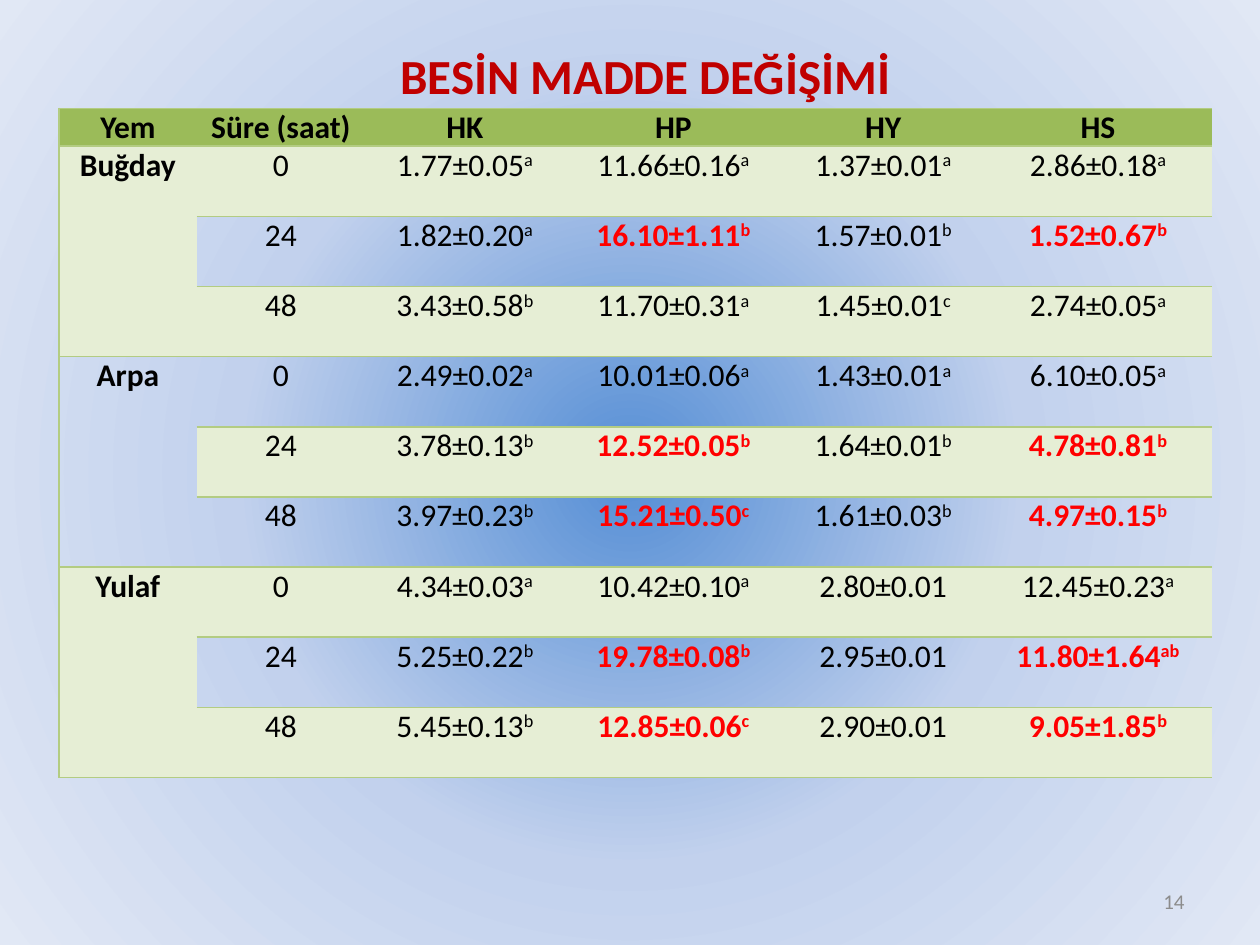
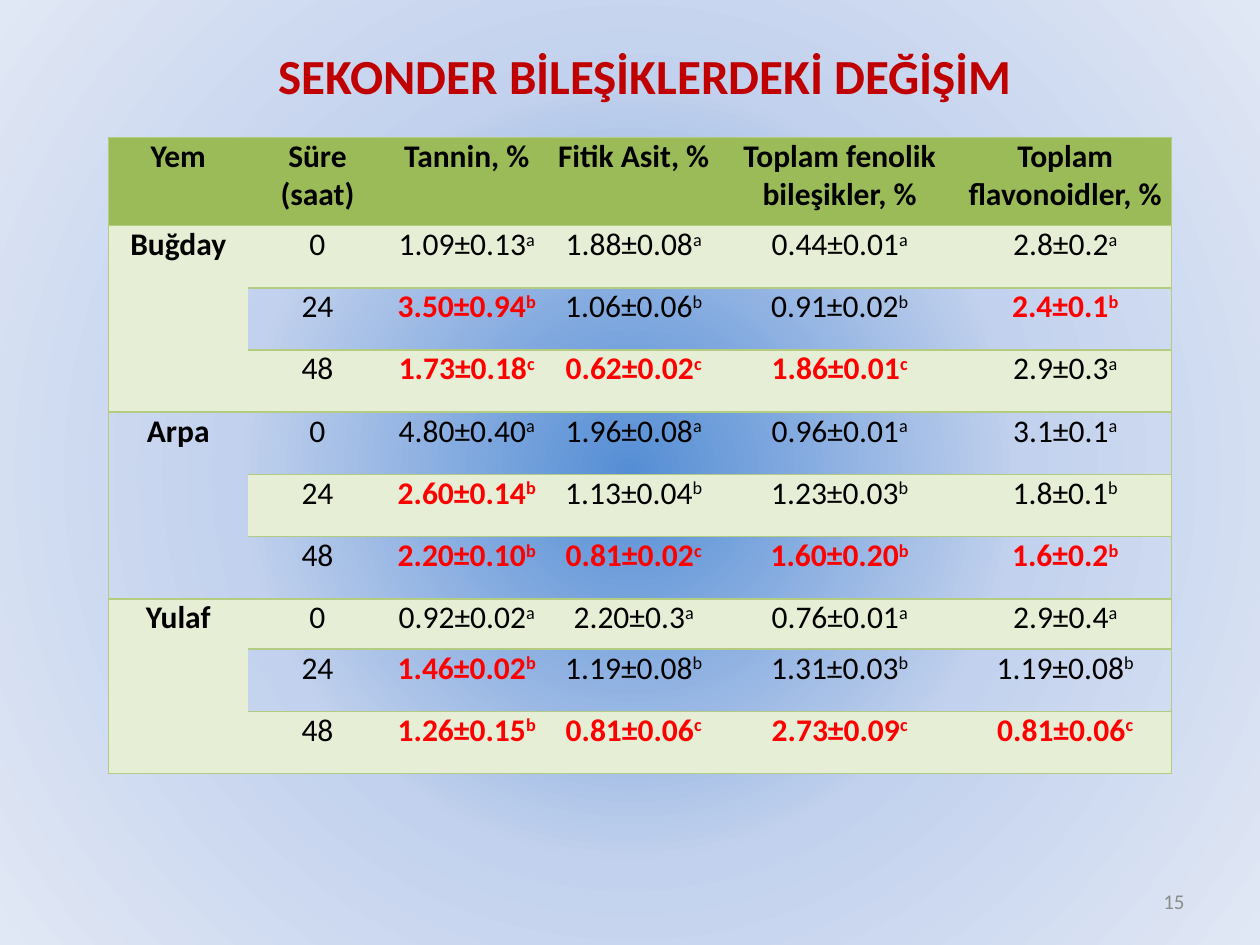
"""Build two slides of feed composition tables on a shared radial background."""
import dataclasses

import lxml.etree
import pptx
import pptx.dml.color
import pptx.enum.text
import pptx.oxml
import pptx.util

NAMESPACE = "http://schemas.openxmlformats.org/drawingml/2006/main"
NO_GRID_STYLE = "{2D5ABB26-0587-4C30-8999-92F81FD0307C}"
ALIGN = pptx.enum.text.PP_ALIGN
ANCHOR = pptx.enum.text.MSO_ANCHOR


@dataclasses.dataclass(frozen=True)
class Theme:
    font: str = "Calibri"
    title_size: int = 28
    table_size: int = 18
    number_size: int = 12
    title: str = "C00000"
    ink: str = "000000"
    highlight: str = "FF0000"
    muted: str = "8C8C8C"
    header: str = "9BBB59"
    band: str = "E6EED5"
    rule: str = "B3CC82"
    backdrop: tuple = ((0, "558ED5"), (50, "C2D1ED"), (100, "E1E8F5"))


def write(para, text, *, font, size, color, bold=False, raised=False, align=None):
    span = para.add_run()
    span.text = text
    span.font.name = font
    span.font.size = pptx.util.Pt(size)
    span.font.bold = bold
    span.font.color.rgb = pptx.dml.color.RGBColor.from_string(color)
    if raised:
        span.font._element.set("baseline", "30000")
    if align is not None:
        para.alignment = align


class Composer:
    COLUMNS, ROWS = 100, 75

    def __init__(self, deck, theme):
        self.deck = deck
        self.theme = theme
        self.page = None

    def across(self, columns):
        return round(self.deck.slide_width * columns / self.COLUMNS)

    def down(self, rows):
        return round(self.deck.slide_height * rows / self.ROWS)

    def area(self, left, top, width, height):
        return self.across(left), self.down(top), self.across(width), self.down(height)

    def new_page(self, title, number):
        self.page = self.deck.slides.add_slide(self.deck.slide_layouts[5])
        self.backdrop()
        self.title(title)
        self.page_number(number)

    def backdrop(self):
        fill = self.page.background.fill
        fill.solid()
        solid = self.page._element.find(f".//{{{NAMESPACE}}}solidFill")
        stops = "".join(
            f'<a:gs pos="{position * 1000}"><a:srgbClr val="{color}"/></a:gs>'
            for position, color in self.theme.backdrop
        )
        gradient = pptx.oxml.parse_xml(
            f'<a:gradFill xmlns:a="{NAMESPACE}" rotWithShape="1"><a:gsLst>{stops}</a:gsLst>'
            '<a:path path="circle"><a:fillToRect l="50000" t="50000" r="50000" b="50000"/>'
            "</a:path></a:gradFill>"
        )
        solid.getparent().replace(solid, gradient)

    def title(self, text):
        box = self.page.shapes.title
        box.left, box.top, box.width, box.height = self.area(5.5, 3.1, 91.4, 8.8)
        frame = box.text_frame
        frame.auto_size = pptx.enum.text.MSO_AUTO_SIZE.NONE
        frame.vertical_anchor = ANCHOR.TOP
        write(frame.paragraphs[0], text, font=self.theme.font, size=self.theme.title_size,
              color=self.theme.title, bold=True, align=ALIGN.CENTER)

    def page_number(self, number):
        frame = self.page.shapes.add_textbox(*self.area(71.7, 69.5, 23.3, 4)).text_frame
        frame.word_wrap = True
        frame.vertical_anchor = ANCHOR.MIDDLE
        write(frame.paragraphs[0], str(number), font=self.theme.font,
              size=self.theme.number_size, color=self.theme.muted, align=ALIGN.RIGHT)

    def border(self, cell, sides):
        properties = cell._tc.get_or_add_tcPr()
        for index, side in enumerate(sides):
            line = lxml.etree.Element(f"{{{NAMESPACE}}}ln{side}", w=str(pptx.util.Pt(1)))
            paint = lxml.etree.SubElement(line, f"{{{NAMESPACE}}}solidFill")
            lxml.etree.SubElement(paint, f"{{{NAMESPACE}}}srgbClr", val=self.theme.rule)
            properties.insert(index, line)

    def cell(self, cell, text, *, fill=None, sides="TB", bold=False):
        cell.margin_left = cell.margin_right = self.across(0.7)
        cell.margin_top = cell.margin_bottom = 0
        cell.vertical_anchor = ANCHOR.TOP
        if fill:
            cell.fill.solid()
            cell.fill.fore_color.rgb = pptx.dml.color.RGBColor.from_string(fill)
        else:
            cell.fill.background()
        self.border(cell, sides)
        marked = text.startswith("*")
        value, caret, letter = text.lstrip("*").partition("^")
        style = dict(font=self.theme.font, size=self.theme.table_size, bold=bold or marked,
                     color=self.theme.highlight if marked else self.theme.ink,
                     align=ALIGN.CENTER)
        para = cell.text_frame.paragraphs[0]
        if value:
            write(para, value, **style)
        if caret:
            write(para, letter, raised=True, **style)

    def table(self, left, top, widths, heights, rows, closed_right=False):
        frame = self.page.shapes.add_table(
            len(rows), len(widths), *self.area(left, top, sum(widths), sum(heights)))
        table = frame.table
        table.first_row = table.horz_banding = False
        table._tbl.tblPr.find(f"{{{NAMESPACE}}}tableStyleId").text = NO_GRID_STYLE
        for column, width in zip(table.columns, widths):
            column.width = self.across(width)
        for row, height in zip(table.rows, heights):
            row.height = self.down(height)
        last = len(widths) - 1
        for r, row in enumerate(rows):
            fill = self.theme.header if r == 0 else self.theme.band if r % 2 else None
            for c, text in enumerate(row):
                sides = "L" * (c == 0) + "R" * (closed_right and c == last) + "TB"
                self.cell(table.cell(r, c), text, fill=fill, sides=sides,
                          bold=r == 0 or c == 0)
        for first in range(1, len(rows), len(HOURS)):
            table.cell(first, 0).merge(table.cell(first + len(HOURS) - 1, 0))


FEEDS = ("Buğday", "Arpa", "Yulaf")
HOURS = ("0", "24", "48")

NUTRIENTS = (
    ("HK", "HP", "HY", "HS"),
    ("1.77±0.05^a", "11.66±0.16^a", "1.37±0.01^a", "2.86±0.18^a"),
    ("1.82±0.20^a", "*16.10±1.11^b", "1.57±0.01^b", "*1.52±0.67^b"),
    ("3.43±0.58^b", "11.70±0.31^a", "1.45±0.01^c", "2.74±0.05^a"),
    ("2.49±0.02^a", "10.01±0.06^a", "1.43±0.01^a", "6.10±0.05^a"),
    ("3.78±0.13^b", "*12.52±0.05^b", "1.64±0.01^b", "*4.78±0.81^b"),
    ("3.97±0.23^b", "*15.21±0.50^c", "1.61±0.03^b", "*4.97±0.15^b"),
    ("4.34±0.03^a", "10.42±0.10^a", "2.80±0.01", "12.45±0.23^a"),
    ("5.25±0.22^b", "*19.78±0.08^b", "2.95±0.01", "*11.80±1.64^ab"),
    ("5.45±0.13^b", "*12.85±0.06^c", "2.90±0.01", "*9.05±1.85^b"),
)

COMPOUNDS = (
    ("Tannin, %", "Fitik Asit, %", "Toplam fenolik bileşikler, %", "Toplam flavonoidler, %"),
    ("1.09±0.13^a", "1.88±0.08^a", "0.44±0.01^a", "2.8±0.2^a"),
    ("*3.50±0.94^b", "1.06±0.06^b", "0.91±0.02^b", "*2.4±0.1^b"),
    ("*1.73±0.18^c", "*0.62±0.02^c", "*1.86±0.01^c", "2.9±0.3^a"),
    ("4.80±0.40^a", "1.96±0.08^a", "0.96±0.01^a", "3.1±0.1^a"),
    ("*2.60±0.14^b", "1.13±0.04^b", "1.23±0.03^b", "1.8±0.1^b"),
    ("*2.20±0.10^b", "*0.81±0.02^c", "*1.60±0.20^b", "*1.6±0.2^b"),
    ("0.92±0.02^a", "2.20±0.3^a", "0.76±0.01^a", "2.9±0.4^a"),
    ("*1.46±0.02^b", "1.19±0.08^b", "1.31±0.03^b", "1.19±0.08^b"),
    ("*1.26±0.15^b", "*0.81±0.06^c", "*2.73±0.09^c", "*0.81±0.06^c"),
)


def with_labels(measures):
    labels = [("Yem", "Süre (saat)")]
    labels += [(feed if hour == HOURS[0] else "", hour) for feed in FEEDS for hour in HOURS]
    return [label + values for label, values in zip(labels, measures)]


def main():
    deck = pptx.Presentation()
    deck.slide_width = pptx.util.Inches(10)
    deck.slide_height = pptx.util.Inches(7.5)
    composer = Composer(deck, Theme())

    composer.new_page("BESİN MADDE DEĞİŞİMİ", 14)
    composer.table(4.7, 8.6, (10.9, 13.4, 15.8, 17.3, 16, 18.1),
                   [3] + [5.57] * 9, with_labels(NUTRIENTS))

    composer.new_page("SEKONDER BİLEŞİKLERDEKİ DEĞİŞİM", 15)
    composer.table(8.6, 10.9, (11.1, 11, 12.7, 13.8, 18.9, 16.9),
                   [7] + [4.94] * 6 + [4] + [4.94] * 2, with_labels(COMPOUNDS),
                   closed_right=True)

    deck.save("out.pptx")


if __name__ == "__main__":
    main()
